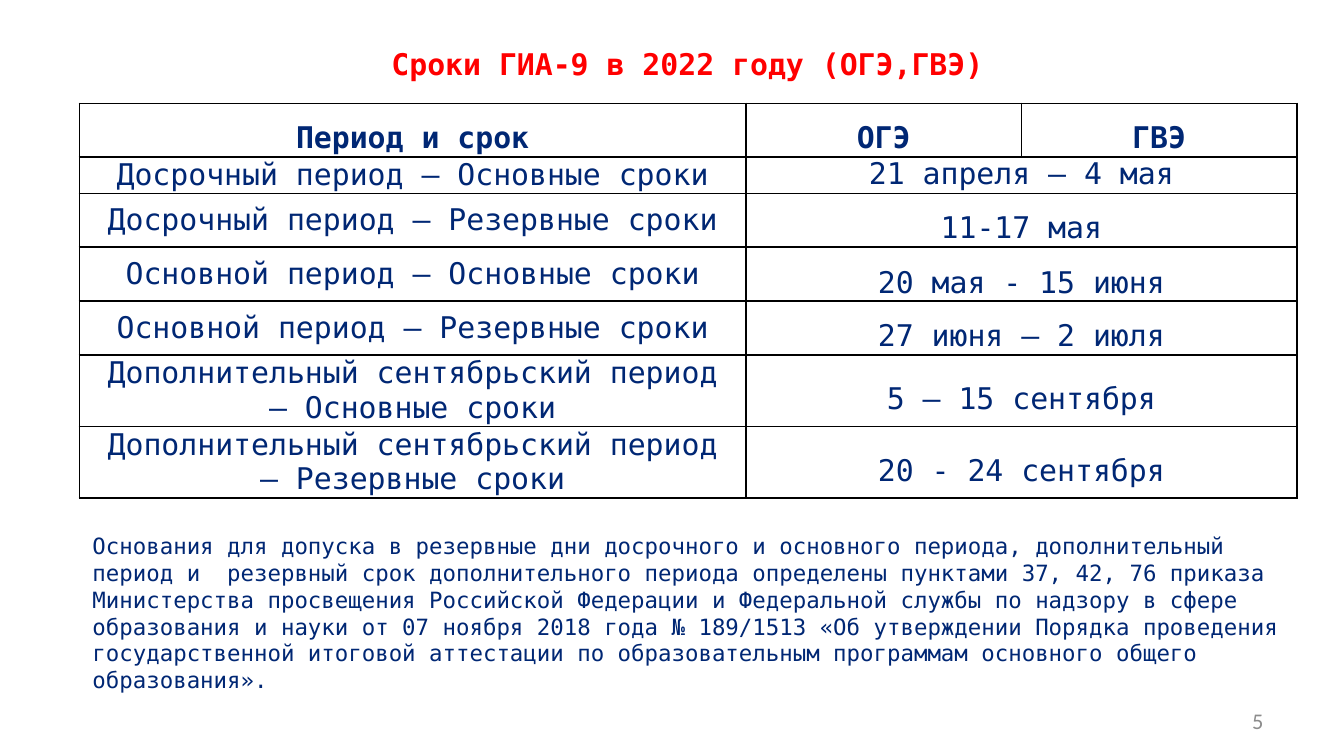
from lxml.etree import SubElement
from pptx import Presentation
from pptx.dml.color import RGBColor
from pptx.enum.text import MSO_ANCHOR as Anchor, PP_ALIGN as Align
from pptx.oxml.ns import qn
from pptx.util import Inches, Pt

NAVY = RGBColor(0x00, 0x27, 0x74)
RED = RGBColor(0xFF, 0x00, 0x00)
GRAY = RGBColor(0x8C, 0x8C, 0x8C)
BLACK = RGBColor(0x00, 0x00, 0x00)
MONO = "DejaVu Sans Mono"


def write(frame, text, size, color, align, bold=False, font=MONO, spacing=1.0):
    frame.word_wrap = True
    para = frame.paragraphs[0]
    para.text = text
    para.alignment = align
    para.line_spacing = spacing
    para.font.size = Pt(size)
    para.font.name = font
    para.font.bold = bold
    para.font.color.rgb = color


def add_borders(cell):
    properties = cell._tc.get_or_add_tcPr()
    for position, side in enumerate(("lnL", "lnR", "lnT", "lnB")):
        line = SubElement(properties, qn(f"a:{side}"), w=str(Pt(1)))
        fill = SubElement(line, qn("a:solidFill"))
        SubElement(fill, qn("a:srgbClr"), val=str(BLACK))
        properties.insert(position, line)


deck = Presentation()
deck.slide_width = Inches(10)
deck.slide_height = Inches(10 * 9 / 16)
page = deck.slides.add_slide(deck.slide_layouts[6])

number = page.shapes.add_textbox(Inches(7.17), Inches(5.21), Inches(2.33), Inches(0.3))
number.text_frame.vertical_anchor = Anchor.MIDDLE
write(number.text_frame, "5", 12, GRAY, Align.RIGHT, font="Calibri")

title = page.shapes.add_textbox(Inches(0.43), Inches(0.29), Inches(9.37), Inches(4.49))
write(title.text_frame, "Сроки ГИА-9 в 2022 году (ОГЭ,ГВЭ)", 16, RED, Align.CENTER, bold=True)

schedule = [
    ("Период и срок", "ОГЭ", "ГВЭ"),
    ("Досрочный период – Основные сроки", "21 апреля – 4 мая"),
    ("Досрочный период – Резервные сроки", "11-17 мая"),
    ("Основной период – Основные сроки", "20 мая - 15 июня"),
    ("Основной период – Резервные сроки", "27 июня – 2 июля"),
    ("Дополнительный сентябрьский период – Основные сроки", "5 – 15 сентября"),
    ("Дополнительный сентябрьский период – Резервные сроки", "20 - 24 сентября"),
]
column_widths = [4.96, 2.05, 2.05]
row_heights = [0.4, 0.27, 0.4, 0.4, 0.4, 0.53, 0.53]

table = page.shapes.add_table(
    len(schedule), len(column_widths), Inches(0.59), Inches(0.77), Inches(9.06), Inches(2.93)
).table
for column, width in zip(table.columns, column_widths):
    column.width = Inches(width)

for row, (texts, height) in enumerate(zip(schedule, row_heights)):
    table.rows[row].height = Inches(height)
    if row > 0:
        table.cell(row, 1).merge(table.cell(row, 2))
    for column, text in enumerate(texts):
        cell = table.cell(row, column)
        cell.margin_top = cell.margin_bottom = 0
        top = row == 0 or (column == 1 and row <= 2)
        cell.vertical_anchor = Anchor.TOP if top else Anchor.MIDDLE
        tall = row == 0 or (column == 1 and row >= 2)
        write(cell.text_frame, text, 16, NAVY, Align.CENTER, bold=row == 0,
              spacing=1.5 if tall else 1.0)
    for cell in table.rows[row].cells:
        cell.fill.background()
        add_borders(cell)

note = page.shapes.add_textbox(Inches(0.59), Inches(3.91), Inches(9.06), Inches(1.11))
write(
    note.text_frame,
    "Основания для допуска в резервные дни досрочного и основного периода, дополнительный "
    "период и  резервный срок дополнительного периода определены пунктами 37, 42, 76 приказа "
    "Министерства просвещения Российской Федерации и Федеральной службы по надзору в сфере "
    "образования и науки от 07 ноября 2018 года № 189/1513 «Об утверждении Порядка проведения "
    "государственной итоговой аттестации по образовательным программам основного общего "
    "образования».",
    12, NAVY, Align.LEFT,
)

deck.save("out.pptx")
